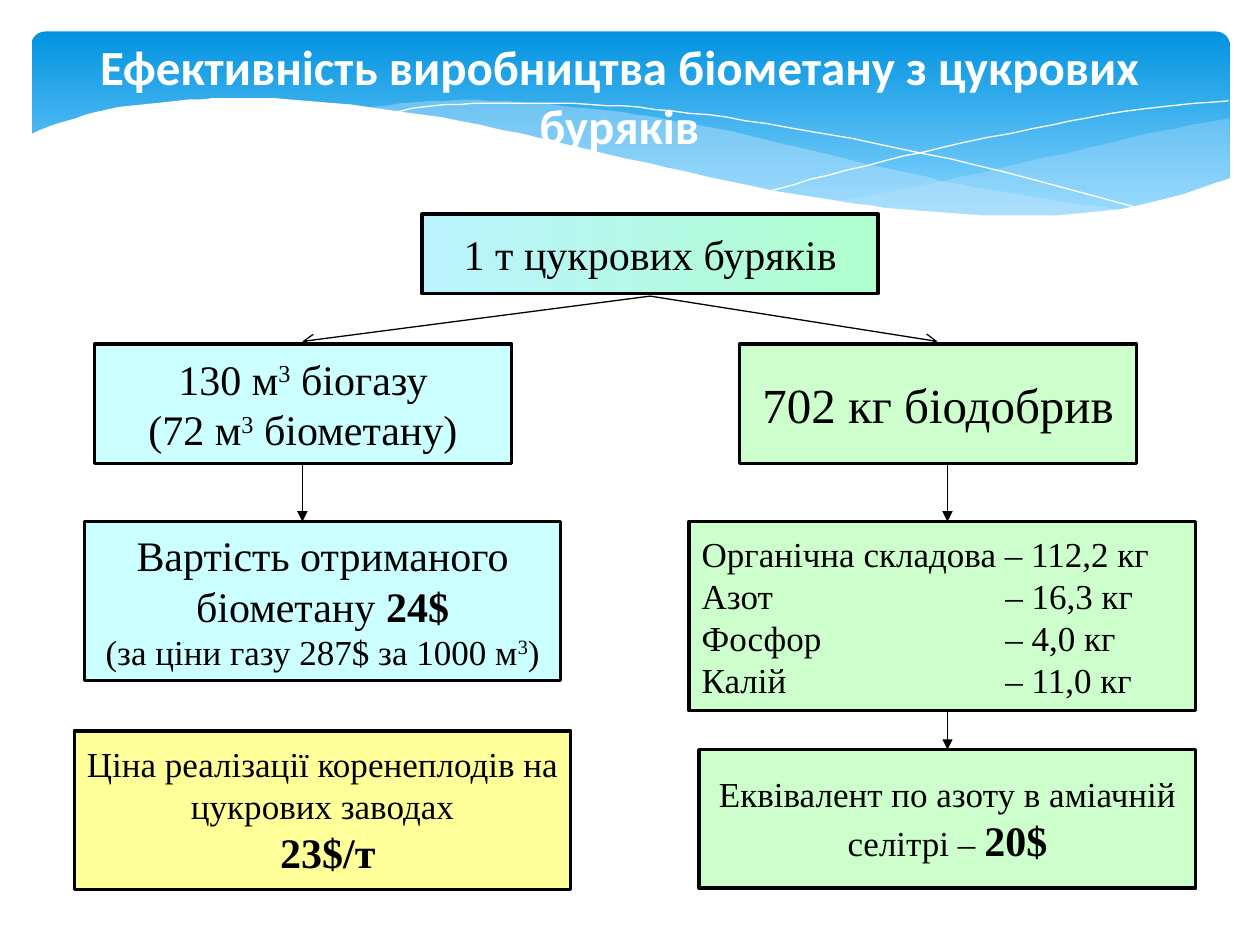
import pptx
import pptx.dml.color
import pptx.enum.dml
import pptx.enum.shapes
import pptx.enum.text
import pptx.oxml.ns
import pptx.util
from lxml import etree

PX = 9144
SERIF = "Times New Roman"
BLUE, GREEN, YELLOW = "CCFFFF", "CCFFCC", "FFFF99"
ALIGN = pptx.enum.text.PP_ALIGN
SHAPES = pptx.enum.shapes.MSO_SHAPE

RIGHT_BAND = [
    [(976, 94), (921, 104), (861, 118), (779, 137), (706, 152), (661, 160)],
    [(661, 160), (705, 165), (757, 170), (803, 172), (854, 170),
     (897, 165), (935, 156), (976, 141)],
]
LEFT_BAND = [
    [(893, 167), (837, 159), (775, 149), (706, 134), (629, 116), (569, 102),
     (514, 92), (465, 86), (399, 80), (344, 80), (286, 86)],
    [(286, 86), (342, 94), (404, 106), (449, 116), (530, 135), (601, 150),
     (665, 161), (722, 168), (773, 172), (828, 173), (893, 167)],
]
FALLING_LINE = [(309, 90), (344, 84), (401, 82), (469, 83), (533, 88), (608, 98),
                (695, 114), (795, 136), (907, 166)]
RISING_LINE = [(613, 151), (672, 135), (748, 117), (836, 99), (895, 88), (975, 80)]
WHITE_WAVE = [
    [(23, 107), (46, 98), (85, 87), (132, 81), (177, 78), (230, 79), (292, 85),
     (365, 96), (447, 114), (529, 133), (603, 149), (668, 160), (726, 167),
     (793, 171), (850, 170), (899, 164), (940, 154), (977, 141)],
    [(977, 224), (23, 224)],
]


def px(*lengths):
    """Turn px lengths into EMU."""
    return [pptx.util.Emu(length * PX) for length in lengths]


def rgb(code):
    """Turn a hex string into a colour."""
    return pptx.dml.color.RGBColor.from_string(code)


def smooth(points, steps=5):
    """Return points along a Catmull-Rom curve through the given ones."""
    padded = [points[0], *points, points[-1]]
    curve = []
    for a, b, c, d in zip(padded, padded[1:], padded[2:], padded[3:]):
        for t in (step / steps for step in range(steps)):
            curve.append(tuple(
                (2 * q + (r - p) * t + (2 * p - 5 * q + 4 * r - s) * t ** 2
                 + (3 * q - p - 3 * r + s) * t ** 3) / 2
                for p, q, r, s in zip(a, b, c, d)))
    return curve + [points[-1]]


def fill_gradient(shape, stops, angle):
    """Fill a shape with a two-stop linear gradient."""
    shape.fill.gradient()
    shape.fill.gradient_angle = angle
    for stop, (position, color) in zip(shape.fill.gradient_stops, stops):
        stop.position = position
        stop.color.rgb = rgb(color)


def add_curve(page, edges, fill=None, opacity=100):
    """Add a filled wave, or a white hairline when no fill is given."""
    points = [point for edge in edges for point in smooth(edge)]
    builder = page.shapes.build_freeform(*points[0], scale=PX)
    builder.add_line_segments(points[1:], close=fill is not None)
    shape = builder.convert_to_shape()
    shape.shadow.inherit = False
    if fill is None:
        shape.fill.background()
        shape.line.color.rgb = rgb("FFFFFF")
        shape.line.width = pptx.util.Pt(0)
        return
    shape.line.fill.background()
    shape.fill.solid()
    shape.fill.fore_color.rgb = rgb(fill)
    if opacity < 100:
        color = shape.element.spPr.find(".//" + pptx.oxml.ns.qn("a:srgbClr"))
        etree.SubElement(color, pptx.oxml.ns.qn("a:alpha"), val=str(opacity * 1000))


def add_header(page):
    """Add the blue banner with its waves."""
    banner = page.shapes.add_shape(SHAPES.ROUNDED_RECTANGLE, *px(25, 25, 951, 156))
    banner.adjustments[0] = 0.07
    banner.shadow.inherit = False
    banner.line.fill.background()
    fill_gradient(banner, [(0, "0293E0"), (0.9, "83D3FE")], 270)
    add_curve(page, RIGHT_BAND, "C6E7FC", 29)
    add_curve(page, LEFT_BAND, "C6E7FC", 40)
    add_curve(page, [FALLING_LINE])
    add_curve(page, [RISING_LINE])
    add_curve(page, WHITE_WAVE, "FFFFFF")


def style_span(span, size, color="000000", font=SERIF, bold=False):
    """Format one run."""
    span.font.size = pptx.util.Pt(size)
    span.font.name = font
    span.font.bold = bold
    span.font.color.rgb = rgb(color)


def set_title(page, text):
    """Fill the title placeholder and bring it in front of the banner."""
    title = page.shapes.title
    title.left, title.top, title.width, title.height = px(35, 21, 913, 110)
    frame = title.text_frame
    frame.text = text
    frame.word_wrap = True
    frame.auto_size = pptx.enum.text.MSO_AUTO_SIZE.NONE
    frame.vertical_anchor = pptx.enum.text.MSO_ANCHOR.MIDDLE
    frame.paragraphs[0].alignment = ALIGN.CENTER
    style_span(frame.paragraphs[0].runs[0], 28, "FFFFFF", "Calibri", True)
    title.element.getparent().append(title.element)


def add_box(page, place, fill, lines, align=ALIGN.CENTER):
    """Add a bordered box; each line is a list of (text, size, mark) spans."""
    box = page.shapes.add_shape(SHAPES.RECTANGLE, *px(*place))
    box.shadow.inherit = False
    box.fill.solid()
    box.fill.fore_color.rgb = rgb(fill)
    box.line.color.rgb = rgb("000000")
    box.line.width = pptx.util.Pt(2)
    frame = box.text_frame
    frame.word_wrap = True
    frame.vertical_anchor = pptx.enum.text.MSO_ANCHOR.MIDDLE
    for index, spans in enumerate(lines):
        para = frame.add_paragraph() if index else frame.paragraphs[0]
        para.alignment = align
        for text, size, mark in spans:
            span = para.add_run()
            span.text = text
            style_span(span, size, bold=mark == "bold")
            if mark == "super":
                span.font._element.set("baseline", "30000")
    return box


def add_tab(para, position):
    """Add a left tab stop to a paragraph."""
    tabs = etree.SubElement(para._p.get_or_add_pPr(), pptx.oxml.ns.qn("a:tabLst"))
    etree.SubElement(tabs, pptx.oxml.ns.qn("a:tab"), pos=str(position * PX), algn="l")


def add_arrow(page, start, end, head):
    """Add a thin black arrow."""
    arrow = page.shapes.add_connector(
        pptx.enum.shapes.MSO_CONNECTOR.STRAIGHT, *px(*start, *end))
    arrow.line.color.rgb = rgb("000000")
    arrow.line.width = pptx.util.Pt(0.75)
    properties = arrow.element.spPr
    line = properties.find(pptx.oxml.ns.qn("a:ln"))
    etree.SubElement(line, pptx.oxml.ns.qn("a:tailEnd"), type=head)
    etree.SubElement(properties, pptx.oxml.ns.qn("a:effectLst"))


def main():
    """Build the slide and save it."""
    deck = pptx.Presentation()
    deck.slide_width, deck.slide_height = px(1000, 750)
    page = deck.slides.add_slide(deck.slide_layouts[5])
    add_header(page)
    set_title(page, "Ефективність виробництва біометану з цукрових буряків")

    beets = add_box(page, (335, 170, 362, 63), "BAF3FE",
                    [[("1 т цукрових буряків", 24, "")]])
    fill_gradient(beets, [(0, "BAF3FE"), (1, "B0FECE")], 0)
    add_box(page, (75, 273, 331, 95), BLUE, [
        [("130 м", 24, ""), ("3", 24, "super"), (" біогазу", 24, "")],
        [("(72 м", 24, ""), ("3", 24, "super"), (" біометану)", 24, "")]])
    add_box(page, (587, 273, 315, 95), GREEN, [[("702 кг біодобрив", 28, "")]])
    add_box(page, (67, 414, 378, 126), BLUE, [
        [("Вартість отриманого біометану ", 24, ""), ("24$", 24, "bold")],
        [("(за ціни газу 287$ за 1000 м", 20, ""), ("3", 20, "super"), (")", 20, "")]])
    add_box(page, (59, 580, 394, 126), YELLOW, [
        [("Ціна реалізації коренеплодів на цукрових заводах", 20, "")],
        [(" 23$/т", 24, "bold")]])
    nutrients = ["Органічна складова – 112,2 кг", "Азот\t– 16,3 кг",
                 "Фосфор\t– 4,0 кг", "Калій\t– 11,0 кг"]
    content = add_box(page, (547, 414, 402, 150), GREEN,
                      [[(text, 20, "")] for text in nutrients], ALIGN.LEFT)
    for para in content.text_frame.paragraphs[1:]:
        add_tab(para, 241)
    add_box(page, (555, 595, 394, 110), GREEN, [
        [("Еквівалент по азоту в аміачній селітрі – ", 20, ""), ("20$", 24, "bold")]])

    for x in (240, 744):
        add_arrow(page, (516, 235), (x, 271), "arrow")
    for x, top, bottom in ((240, 367, 414), (752, 367, 414), (752, 564, 595)):
        add_arrow(page, (x, top), (x, bottom), "triangle")
    deck.save("out.pptx")


if __name__ == "__main__":
    main()
